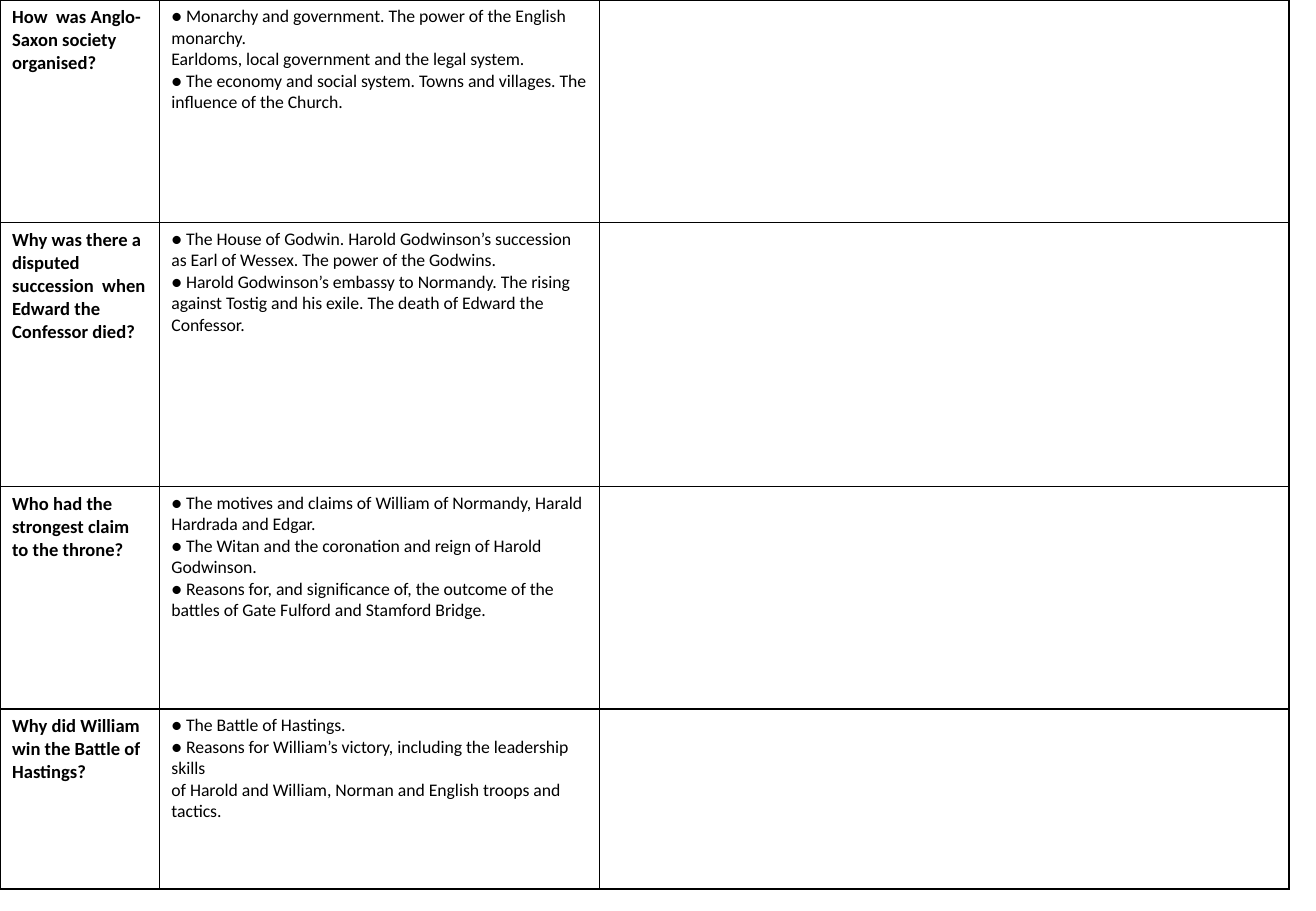
from lxml import etree
from pptx import Presentation
from pptx.dml.color import RGBColor
from pptx.oxml.ns import qn
from pptx.util import Inches, Pt

COLORS = {"text": "000000", "border": "000000", "paper": "FFFFFF"}
FONT = "Calibri"
COLUMN_WIDTHS = (1.31, 3.62, 5.67)
ROW_HEIGHTS = (1.83, 2.17, 1.83, 1.48)
ENQUIRIES = [
    ("How  was Anglo- Saxon society organised?", [
        "● Monarchy and government. The power of the English monarchy.",
        "Earldoms, local government and the legal system.",
        "● The economy and social system. Towns and villages. The influence of the Church.",
    ]),
    ("Why was there a disputed succession  when Edward the Confessor died?", [
        "● The House of Godwin. Harold Godwinson’s succession as Earl of Wessex. "
        "The power of the Godwins.",
        "● Harold Godwinson’s embassy to Normandy. The rising against Tostig and his exile. "
        "The death of Edward the Confessor.",
    ]),
    ("Who had the strongest claim to the throne?", [
        "● The motives and claims of William of Normandy, Harald Hardrada and Edgar.",
        "● The Witan and the coronation and reign of Harold Godwinson.",
        "● Reasons for, and significance of, the outcome of the battles of Gate Fulford "
        "and Stamford Bridge.",
    ]),
    ("Why did William win the Battle of Hastings?", [
        "● The Battle of Hastings.",
        "● Reasons for William’s victory, including the leadership skills",
        "of Harold and William, Norman and English troops and tactics.",
    ]),
]


def style_cell(cell):
    """Give a cell its plain fill and four thin borders."""
    cell.fill.solid()
    cell.fill.fore_color.rgb = RGBColor.from_string(COLORS["paper"])
    properties = cell._tc.get_or_add_tcPr()
    for position, side in enumerate(("a:lnL", "a:lnR", "a:lnT", "a:lnB")):
        border = etree.Element(qn(side), w=str(Pt(1)))
        fill = etree.SubElement(border, qn("a:solidFill"))
        etree.SubElement(fill, qn("a:srgbClr"), val=COLORS["border"])
        properties.insert(position, border)


def write_cell(cell, lines, size, bold):
    """Write one paragraph per line in a cell."""
    cell.text = "\n".join(lines)
    for paragraph in cell.text_frame.paragraphs:
        paragraph.font.name = FONT
        paragraph.font.size = Pt(size)
        paragraph.font.bold = bold
        paragraph.font.color.rgb = RGBColor.from_string(COLORS["text"])


def add_enquiry_table(slide, left, top, width, height):
    """Add the grid of enquiry questions, topics and empty note cells."""
    grid = slide.shapes.add_table(
        len(ROW_HEIGHTS), len(COLUMN_WIDTHS),
        Inches(left), Inches(top), Inches(width), Inches(height)).table
    grid.first_row = False
    grid.horz_banding = False
    for column, share in zip(grid.columns, COLUMN_WIDTHS):
        column.width = Inches(width * share / sum(COLUMN_WIDTHS))
    for row, share in zip(grid.rows, ROW_HEIGHTS):
        row.height = Inches(height * share / sum(ROW_HEIGHTS))
    for cell in grid.iter_cells():
        style_cell(cell)
    for row, (question, topics) in enumerate(ENQUIRIES):
        write_cell(grid.cell(row, 0), [question], 11, True)
        write_cell(grid.cell(row, 1), topics, 10.5, False)


def main():
    """Build and save the slide."""
    deck = Presentation()
    deck.slide_width = Inches(10.83)
    deck.slide_height = Inches(7.5)
    slide = deck.slides.add_slide(deck.slide_layouts[6])
    add_enquiry_table(slide, 0, 0, 10.61, 7.32)
    deck.save("out.pptx")


if __name__ == "__main__":
    main()
